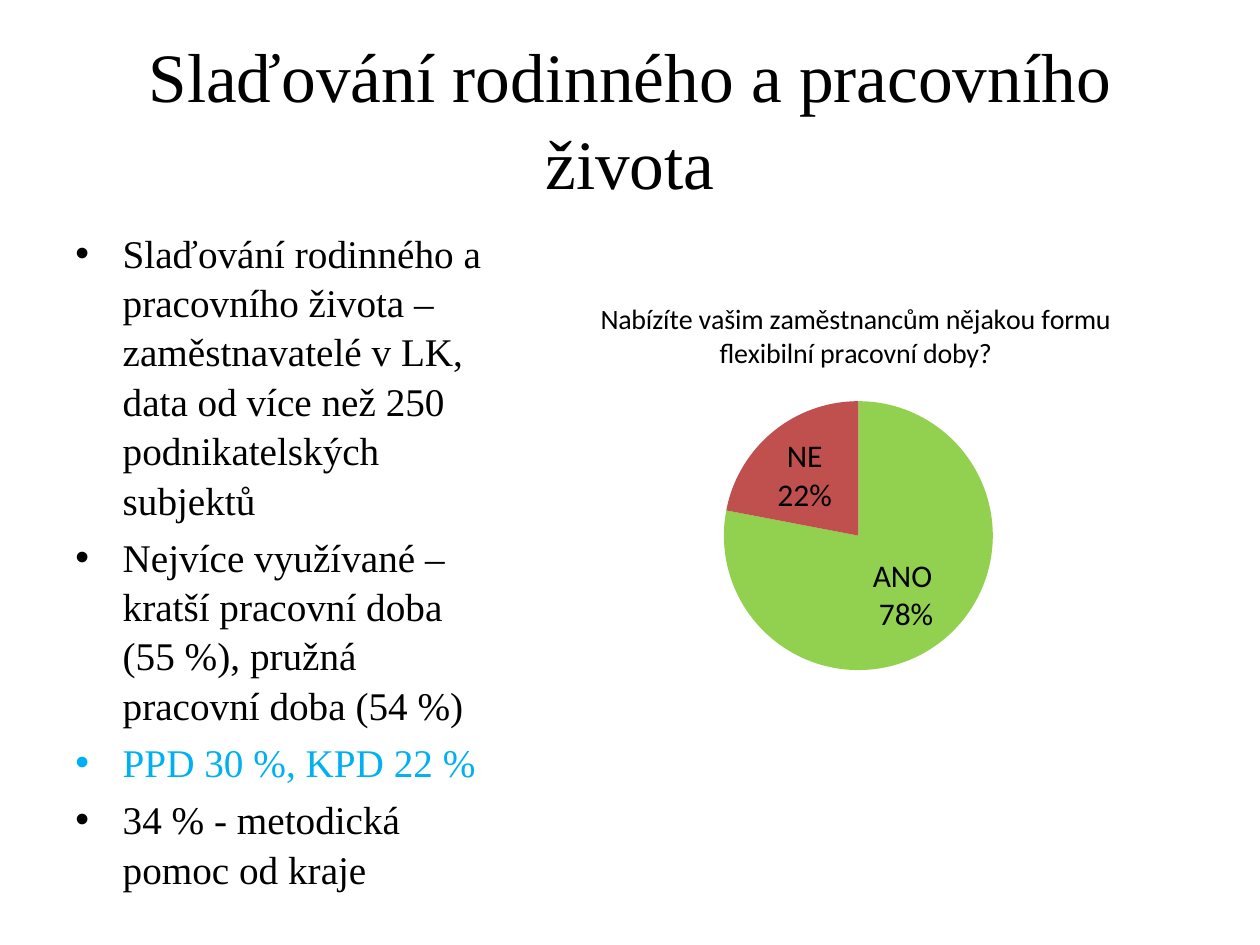
from dataclasses import dataclass

from lxml import etree
from pptx import Presentation
from pptx.chart.data import CategoryChartData
from pptx.dml.color import RGBColor
from pptx.enum.chart import XL_CHART_TYPE, XL_LABEL_POSITION
from pptx.enum.text import MSO_ANCHOR, PP_ALIGN
from pptx.oxml.ns import qn
from pptx.util import Pt

PIE = XL_CHART_TYPE.PIE
INSIDE_END = XL_LABEL_POSITION.INSIDE_END
MIDDLE, TOP = MSO_ANCHOR.MIDDLE, MSO_ANCHOR.TOP
CENTER, LEFT = PP_ALIGN.CENTER, PP_ALIGN.LEFT


@dataclass(frozen=True)
class Theme:
    text_font: str = "Times New Roman"
    chart_font: str = "Calibri"
    black: str = "000000"
    accent: str = "00B0F0"
    yes: str = "92D050"
    no: str = "C0504D"
    title_size: float = 39.6
    body_size: float = 22.4
    chart_size: float = 10
    chart_title_size: float = 16
    label_size: float = 18
    line_spacing: float = 1.05
    bullet_indent: float = 27
    bullet_gap: float = 4.5


class SlideBuilder:
    """Holds the theme and the current slide, and adds elements to it."""

    def __init__(self, slide, theme):
        self.slide = slide
        self.theme = theme

    def style_font(self, font, name, size, color):
        font.name = name
        font.size = Pt(size)
        font.color.rgb = RGBColor.from_string(color)

    def text_frame(self, box, anchor):
        frame = self.slide.shapes.add_textbox(*map(Pt, box)).text_frame
        frame.word_wrap = True
        frame.vertical_anchor = anchor
        return frame

    def fill_paragraph(self, paragraph, text, size, color, alignment):
        paragraph.alignment = alignment
        paragraph.line_spacing = self.theme.line_spacing
        run = paragraph.add_run()
        run.text = text
        self.style_font(run.font, self.theme.text_font, size, color)

    def title(self, box, text):
        frame = self.text_frame(box, MIDDLE)
        self.fill_paragraph(frame.paragraphs[0], text, self.theme.title_size, self.theme.black, CENTER)

    def bullets(self, box, items):
        frame = self.text_frame(box, TOP)
        for index, (text, color) in enumerate(items):
            paragraph = frame.add_paragraph() if index else frame.paragraphs[0]
            self.fill_paragraph(paragraph, text, self.theme.body_size, color, LEFT)
            paragraph.space_before = Pt(self.theme.bullet_gap)
            properties = paragraph._p.get_or_add_pPr()
            indent = Pt(self.theme.bullet_indent)
            properties.set("marL", str(indent))
            properties.set("indent", str(-indent))
            etree.SubElement(properties, qn("a:buFont")).set("typeface", "Arial")
            etree.SubElement(properties, qn("a:buChar")).set("char", "•")

    def manual_layout(self, parent, position, **settings):
        for existing in parent.findall(qn("c:layout")):
            parent.remove(existing)
        layout = etree.Element(qn("c:layout"))
        manual = etree.SubElement(layout, qn("c:manualLayout"))
        for name, value in settings.items():
            etree.SubElement(manual, qn(f"c:{name}")).set("val", str(value))
        parent.insert(position, layout)

    def pie(self, box, title, slices):
        theme = self.theme
        data = CategoryChartData()
        data.categories = [name for name, _, _ in slices]
        data.add_series("Series 1", [value for _, value, _ in slices])
        chart = self.slide.shapes.add_chart(PIE, *map(Pt, box), data).chart
        self.style_font(chart.font, theme.chart_font, theme.chart_size, theme.black)
        chart.has_legend = False
        chart.has_title = True
        run = chart.chart_title.text_frame.paragraphs[0].add_run()
        run.text = title
        self.style_font(run.font, theme.chart_font, theme.chart_title_size, theme.black)
        run.font.bold = False
        self.manual_layout(chart.chart_title._element, 1, xMode="edge", yMode="edge", x=0.15, y=0.07)
        self.manual_layout(
            chart._chartSpace.find(f".//{qn('c:plotArea')}"), 0,
            layoutTarget="inner", xMode="edge", yMode="edge",
            x=0.33, y=0.32, w=0.38, h=0.63,
        )

        plot = chart.plots[0]
        plot.vary_by_categories = True
        for index, (_, _, color) in enumerate(slices):
            point_format = plot.series[0].points[index].format
            point_format.fill.solid()
            point_format.fill.fore_color.rgb = RGBColor.from_string(color)
            point_format.line.fill.background()
        labels = plot.series[0].data_labels
        self.style_font(labels.font, theme.chart_font, theme.label_size, theme.black)
        labels.number_format = "0%"
        labels.number_format_is_linked = False
        labels.position = INSIDE_END
        labels.show_value = False
        labels.show_category_name = True
        labels.show_percentage = True
        separator = etree.Element(qn("c:separator"))
        separator.text = "\n"
        labels._element.find(qn("c:showBubbleSize")).addnext(separator)


def main():
    presentation = Presentation()
    presentation.slide_width, presentation.slide_height = Pt(720), Pt(540)
    theme = Theme()
    builder = SlideBuilder(presentation.slides.add_slide(presentation.slide_layouts[6]), theme)
    builder.title((36, 21.6, 648, 90), "Slaďování rodinného a pracovního života")
    builder.bullets((36, 126, 250.5, 356.4), [
        ("Slaďování rodinného a pracovního života – zaměstnavatelé v LK, "
         "data od více než 250 podnikatelských subjektů", theme.black),
        ("Nejvíce využívané – kratší pracovní doba (55 %), pružná pracovní doba (54 %)", theme.black),
        ("PPD 30 %, KPD 22 %", theme.accent),
        ("34 % - metodická pomoc od kraje", theme.black),
    ])
    builder.pie(
        (279.4, 151.2, 406, 244),
        "Nabízíte vašim zaměstnancům nějakou formu flexibilní pracovní doby?",
        [("ANO ", 78, theme.yes), ("NE", 22, theme.no)],
    )
    presentation.save("out.pptx")


if __name__ == "__main__":
    main()
